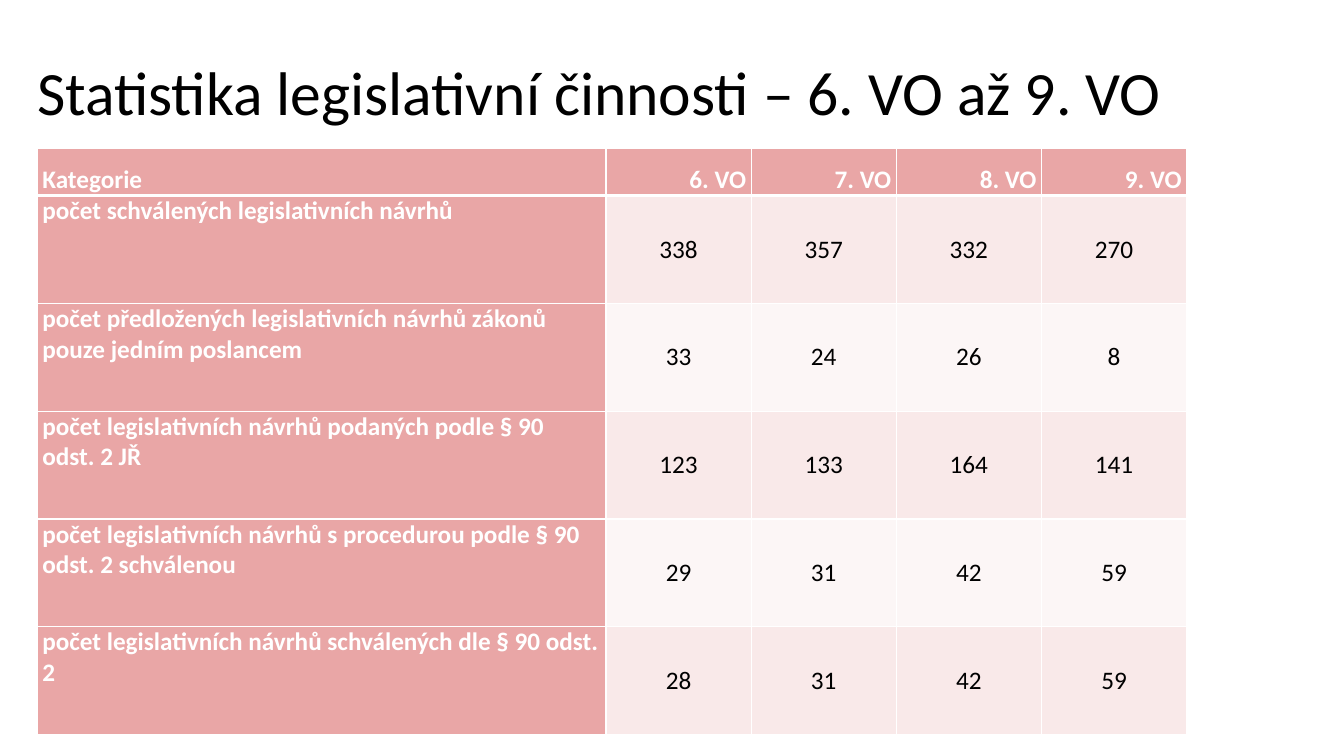
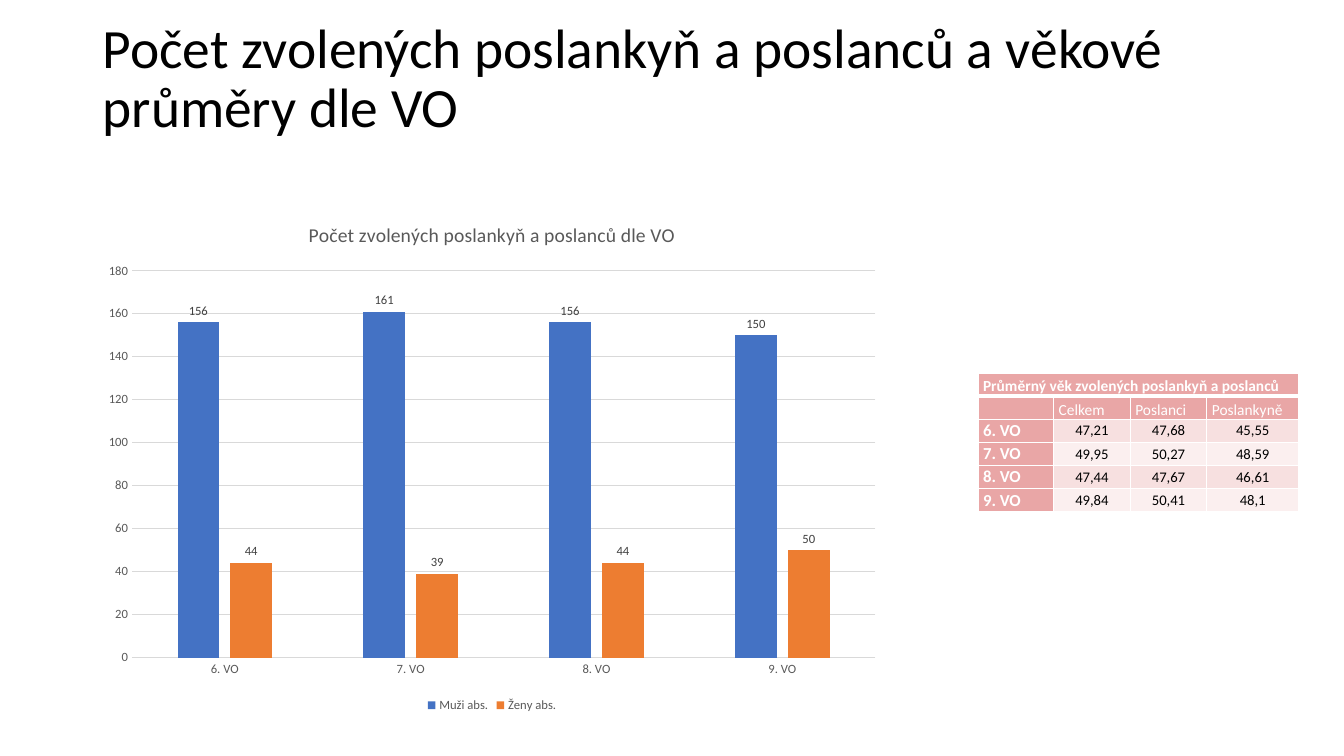
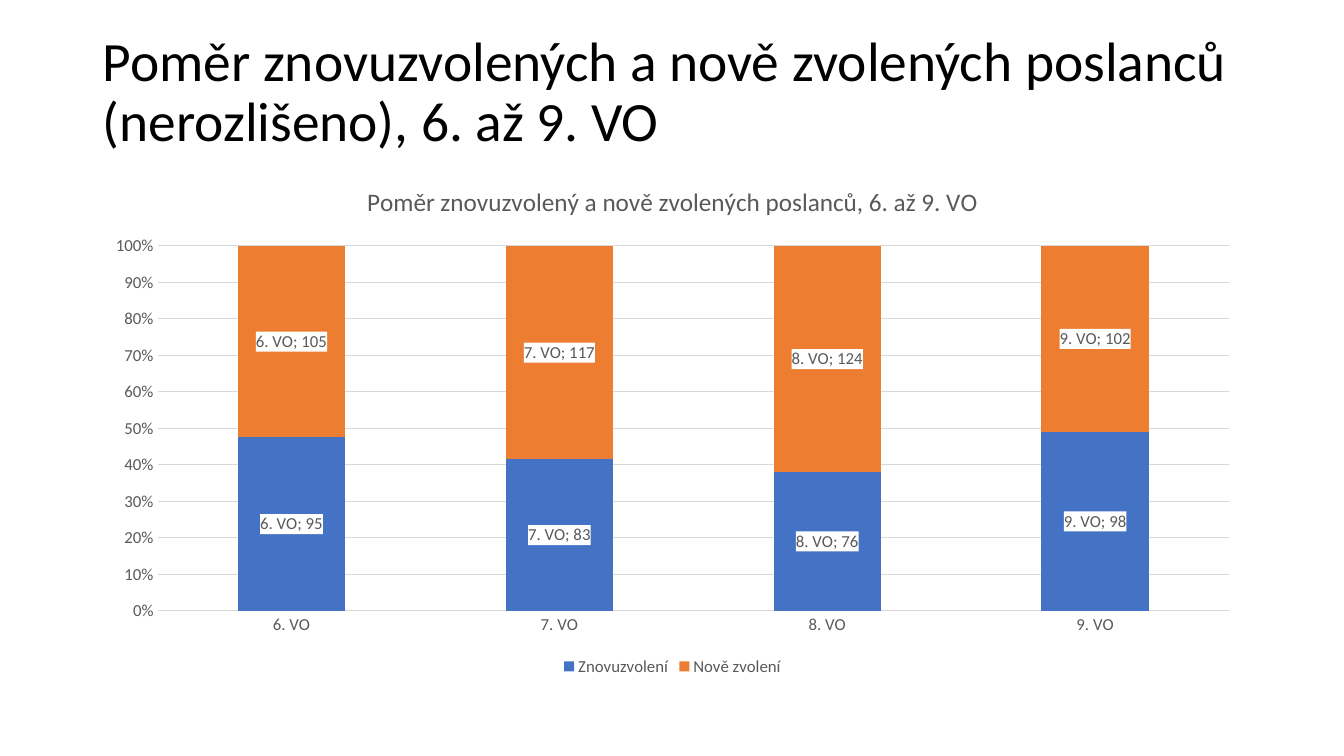
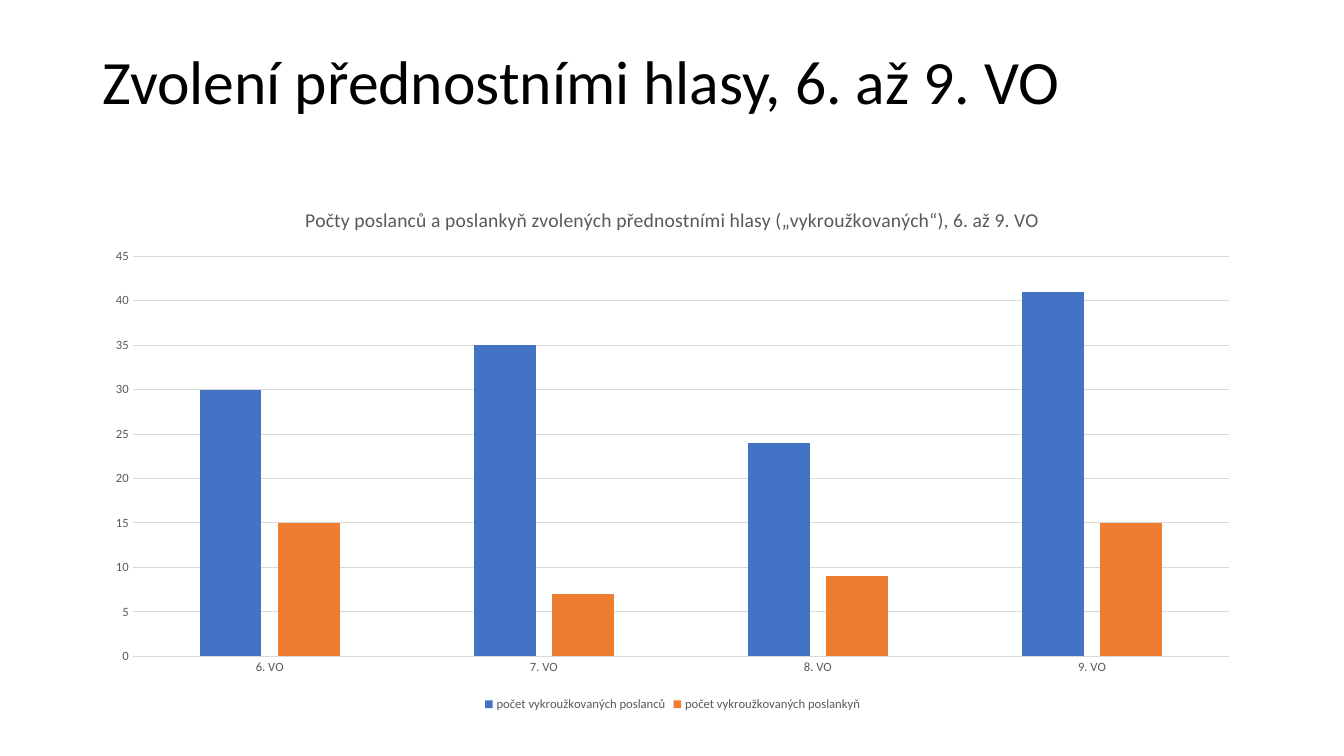
from dataclasses import dataclass

from lxml import etree
from pptx import Presentation
from pptx.chart.data import CategoryChartData
from pptx.dml.color import RGBColor
from pptx.enum.chart import XL_CHART_TYPE as ChartType
from pptx.enum.chart import XL_LABEL_POSITION as LabelPosition
from pptx.enum.chart import XL_LEGEND_POSITION as LegendPosition
from pptx.enum.chart import XL_TICK_MARK as TickMark
from pptx.enum.text import MSO_ANCHOR as Anchor
from pptx.enum.text import PP_ALIGN as Align
from pptx.oxml import parse_xml
from pptx.oxml.ns import nsdecls, qn
from pptx.util import Inches, Pt


@dataclass(frozen=True)
class Theme:
    font: str = "Calibri"
    black: str = "000000"
    white: str = "FFFFFF"
    rose: str = "E9A6A6"
    wide_bands: tuple = ("F9E9E9", "FCF6F6")
    small_bands: tuple = ("F7E0E0", "FBEFEF")
    series: tuple = ("4472C4", "ED7D31")
    grid: str = "D9D9D9"
    chart_text: str = "595959"
    label_text: str = "404040"
    title_size: float = 44
    long_title_size: float = 39.6
    wide_table_size: float = 18
    small_header_size: float = 11
    small_label_size: float = 12
    small_value_size: float = 10.5
    chart_title_size: float = 14
    large_chart_title_size: float = 18
    chart_size: float = 9
    large_chart_size: float = 12


THEME = Theme()
TERMS = ["6. VO", "7. VO", "8. VO", "9. VO"]


class Deck:
    def __init__(self, theme):
        self.theme = theme
        self.presentation = Presentation()
        self.presentation.slide_width = Inches(13.33)
        self.presentation.slide_height = Inches(7.5)
        self.slide = None

    def new_slide(self):
        layout = self.presentation.slide_layouts[6]
        self.slide = self.presentation.slides.add_slide(layout)

    def style(self, font, size, color, bold=False):
        font.name = self.theme.font
        font.size = Pt(size)
        font.bold = bold
        font.color.rgb = RGBColor.from_string(color)

    def title(self, text, left, top, height, size):
        box = self.slide.shapes.add_textbox(
            Inches(left), Inches(top), Inches(11.5), Inches(height))
        frame = box.text_frame
        frame.word_wrap = True
        frame.vertical_anchor = Anchor.MIDDLE
        paragraph = frame.paragraphs[0]
        paragraph.text = text
        paragraph.line_spacing = 0.9
        self.style(paragraph.font, size, self.theme.black)

    def cell(self, cell, text, fill, size, color, bold, align, anchor):
        cell.margin_left = cell.margin_right = Inches(0.05)
        cell.margin_top = cell.margin_bottom = 0
        cell.vertical_anchor = anchor
        cell.fill.solid()
        cell.fill.fore_color.rgb = RGBColor.from_string(fill)
        paragraph = cell.text_frame.paragraphs[0]
        paragraph.alignment = align
        self.style(paragraph.font, size, color, bold)
        if text:
            paragraph.text = text
        else:
            end = paragraph._p.get_or_add_endParaRPr()
            end.set("sz", str(int(size * 100)))

    def borders(self, cell, top=1, bottom=1):
        """Draw white cell edges; widths are in points."""
        properties = cell._tc.get_or_add_tcPr()
        edges = {"lnL": 1, "lnR": 1, "lnT": top, "lnB": bottom}
        for index, (edge, width) in enumerate(edges.items()):
            properties.insert(index, parse_xml(
                f'<a:{edge} {nsdecls("a")} w="{Pt(width)}"><a:solidFill>'
                f'<a:srgbClr val="{self.theme.white}"/></a:solidFill></a:{edge}>'))

    def table(self, left, top, widths, heights, rows, bands, sizes,
              header_rows=1, header_align=Align.LEFT, label_anchor=Anchor.MIDDLE):
        """Add a table; sizes are those of header, row label and value."""
        theme = self.theme
        header_size, label_size, value_size = sizes
        table = self.slide.shapes.add_table(
            len(rows), len(widths), Inches(left), Inches(top),
            Inches(sum(widths)), Inches(sum(heights))).table
        table.first_row = table.horz_banding = False
        for column, width in zip(table.columns, widths):
            column.width = Inches(width)
        for row, height in zip(table.rows, heights):
            row.height = Inches(height)
        for r, texts in enumerate(rows):
            for c, text in enumerate(texts):
                cell = table.cell(r, c)
                if r < header_rows:
                    look = (theme.rose, header_size, theme.white, r == 0,
                            header_align if c else Align.LEFT, Anchor.BOTTOM)
                elif c == 0:
                    look = (theme.rose, label_size, theme.white, True,
                            Align.LEFT, label_anchor)
                else:
                    look = (bands[(r - header_rows) % 2], value_size,
                            theme.black, False, Align.CENTER, Anchor.MIDDLE)
                self.cell(cell, text, *look)
                self.borders(cell, top=3 if r == 1 else 1, bottom=3 if r == 0 else 1)
        return table

    def value_labels(self, series, size):
        labels = series.data_labels
        labels.show_value = True
        labels.position = LabelPosition.OUTSIDE_END
        self.style(labels.font, size, self.theme.label_text)

    def boxed_labels(self, series, size):
        """Label each bar with category and value on a white box."""
        labels = series.data_labels
        labels.show_value = labels.show_category_name = True
        self.style(labels.font, size, self.theme.chart_text)
        element = labels._element
        element.find(qn("c:txPr")).addprevious(parse_xml(
            f'<c:spPr {nsdecls("c", "a")}><a:solidFill>'
            f'<a:srgbClr val="{self.theme.white}"/></a:solidFill></c:spPr>'))
        separator = etree.Element(qn("c:separator"))
        separator.text = "; "
        element.find(qn("c:showBubbleSize")).addnext(separator)

    def chart(self, kind, box, title, series, title_size, size, gap, overlap,
              maximum, step, number_format="General", label=None):
        theme = self.theme
        data = CategoryChartData()
        data.categories = TERMS
        for name, values in series.items():
            data.add_series(name, values)
        chart = self.slide.shapes.add_chart(kind, *map(Inches, box), data).chart
        self.style(chart.font, size, theme.chart_text)

        chart.has_title = True
        paragraph = chart.chart_title.text_frame.paragraphs[0]
        paragraph.text = title
        self.style(paragraph.font, title_size, theme.chart_text)
        chart.chart_title.include_in_layout = False

        chart.has_legend = True
        chart.legend.position = LegendPosition.BOTTOM
        chart.legend.include_in_layout = False
        self.style(chart.legend.font, size, theme.chart_text)

        value_axis = chart.value_axis
        value_axis.minimum_scale = 0
        value_axis.maximum_scale = maximum
        value_axis.major_unit = step
        value_axis.tick_labels.number_format = number_format
        value_axis.tick_labels.number_format_is_linked = False
        for axis in (chart.category_axis, value_axis):
            axis.major_tick_mark = axis.minor_tick_mark = TickMark.NONE
            self.style(axis.tick_labels.font, size, theme.chart_text)
        value_axis.format.line.fill.background()
        for line in (chart.category_axis.format.line,
                     value_axis.major_gridlines.format.line):
            line.color.rgb = RGBColor.from_string(theme.grid)
            line.width = Pt(0.75)

        plot = chart.plots[0]
        plot.gap_width = gap
        plot.overlap = overlap
        plot.vary_by_categories = False
        for bars, color in zip(plot.series, theme.series):
            bars.format.fill.solid()
            bars.format.fill.fore_color.rgb = RGBColor.from_string(color)
            if label:
                label(bars, size)


def legislation_slide(deck):
    deck.new_slide()
    deck.title("Statistika legislativní činnosti – 6. VO až 9. VO",
               0.27, 0.22, 1.45, THEME.title_size)
    rows = [
        ["Kategorie", *TERMS],
        ["počet schválených legislativních návrhů", "338", "357", "332", "270"],
        ["počet předložených legislativních návrhů zákonů pouze jedním poslancem",
         "33", "24", "26", "8"],
        ["počet legislativních návrhů podaných podle § 90 odst. 2 JŘ",
         "123", "133", "164", "141"],
        ["počet legislativních návrhů s procedurou podle § 90 odst. 2 schválenou",
         "29", "31", "42", "59"],
        ["počet legislativních návrhů schválených dle § 90 odst. 2",
         "28", "31", "42", "59"],
    ]
    deck.table(0.37, 1.47, [5.64] + [1.44] * 4, [0.47] + [1.07] * 5, rows,
               THEME.wide_bands, [THEME.wide_table_size] * 3,
               header_align=Align.RIGHT, label_anchor=Anchor.TOP)


def members_slide(deck):
    deck.new_slide()
    deck.title("Počet zvolených poslankyň a poslanců a věkové průměry dle VO",
               0.92, 0.11, 1.37, THEME.long_title_size)
    deck.chart(ChartType.COLUMN_CLUSTERED, (0.92, 2, 7.92, 5.11),
               "Počet zvolených poslankyň a poslanců dle VO",
               {"Muži abs.": [156, 161, 156, 150], "Ženy abs.": [44, 39, 44, 50]},
               THEME.chart_title_size, THEME.chart_size, gap=219, overlap=-27,
               maximum=180, step=20, label=deck.value_labels)
    rows = [
        ["Průměrný věk zvolených poslankyň a poslanců", "", "", ""],
        ["", "Celkem", "Poslanci", "Poslankyně"],
        ["6. VO", "47,21", "47,68", "45,55"],
        ["7. VO", "49,95", "50,27", "48,59"],
        ["8. VO", "47,44", "47,67", "46,61"],
        ["9. VO", "49,84", "50,41", "48,1"],
    ]
    sizes = [THEME.small_header_size, THEME.small_label_size, THEME.small_value_size]
    table = deck.table(9.7, 3.7, [0.75, 0.76, 0.76, 0.91], [0.23] * 6, rows,
                       THEME.small_bands, sizes, header_rows=2)
    table.cell(0, 0).merge(table.cell(0, 3))


def reelected_slide(deck):
    deck.new_slide()
    deck.title("Poměr znovuzvolených a nově zvolených poslanců (nerozlišeno), 6. až 9. VO",
               0.92, 0.28, 1.29, THEME.long_title_size)
    deck.chart(ChartType.COLUMN_STACKED_100, (0.92, 1.63, 11.5, 5.12),
               "Poměr znovuzvolený a nově zvolených poslanců, 6. až 9. VO",
               {"Znovuzvolení": [95, 83, 76, 98], "Nově zvolení": [105, 117, 124, 102]},
               THEME.large_chart_title_size, THEME.large_chart_size,
               gap=150, overlap=100, maximum=1, step=0.1,
               number_format="0%", label=deck.boxed_labels)


def preferential_votes_slide(deck):
    deck.new_slide()
    deck.title("Zvolení přednostními hlasy, 6. až 9. VO",
               0.92, 0.18, 1.32, THEME.title_size)
    deck.chart(ChartType.COLUMN_CLUSTERED, (0.92, 1.85, 11.5, 5.25),
               "Počty poslanců a poslankyň zvolených přednostními hlasy "
               "(„vykroužkovaných“), 6. až 9. VO",
               {"počet vykroužkovaných poslanců": [30, 35, 24, 41],
                "počet vykroužkovaných poslankyň": [15, 7, 9, 15]},
               THEME.chart_title_size, THEME.chart_size, gap=219, overlap=-27,
               maximum=45, step=5)


def main():
    deck = Deck(THEME)
    legislation_slide(deck)
    members_slide(deck)
    reelected_slide(deck)
    preferential_votes_slide(deck)
    deck.presentation.save("out.pptx")


if __name__ == "__main__":
    main()
